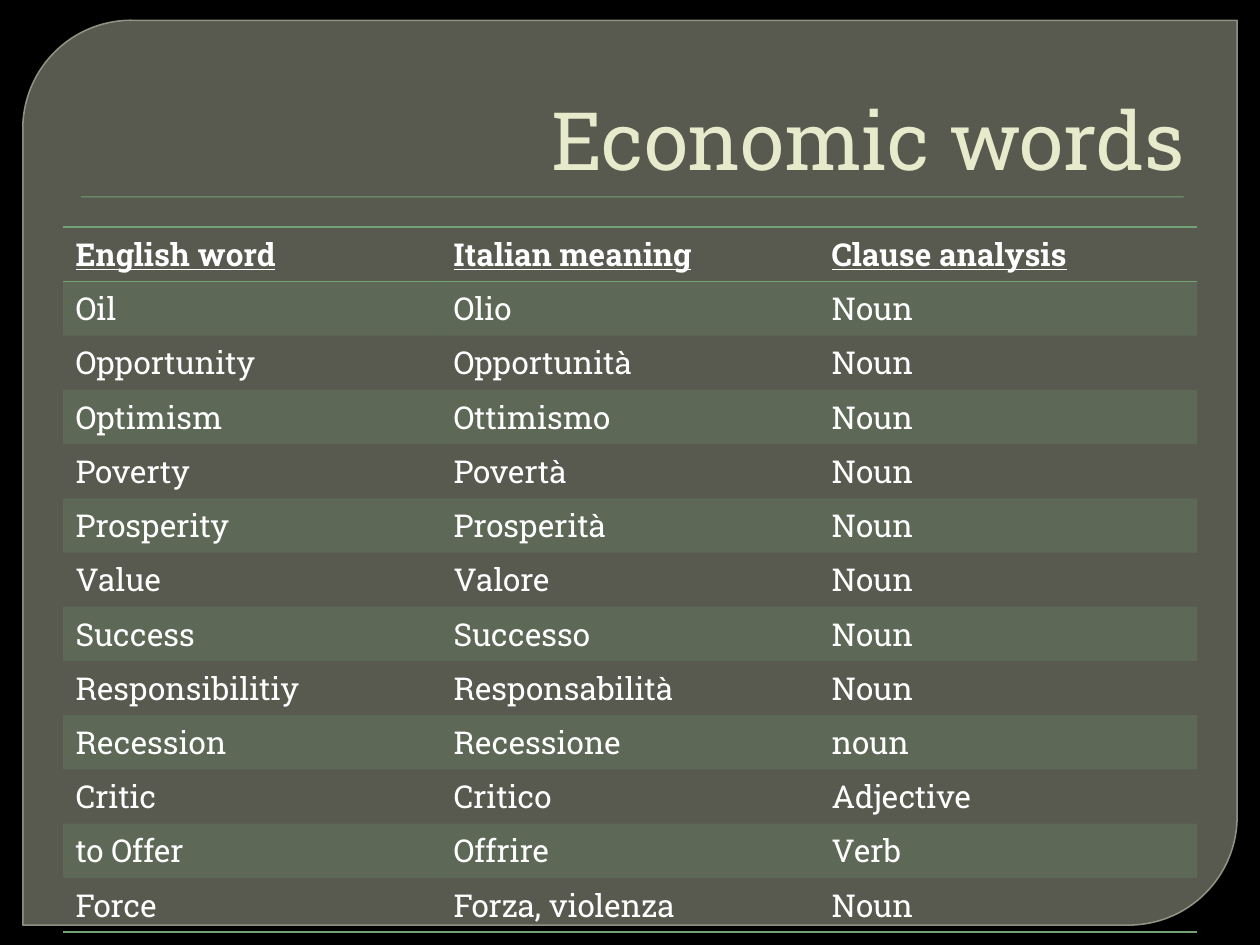
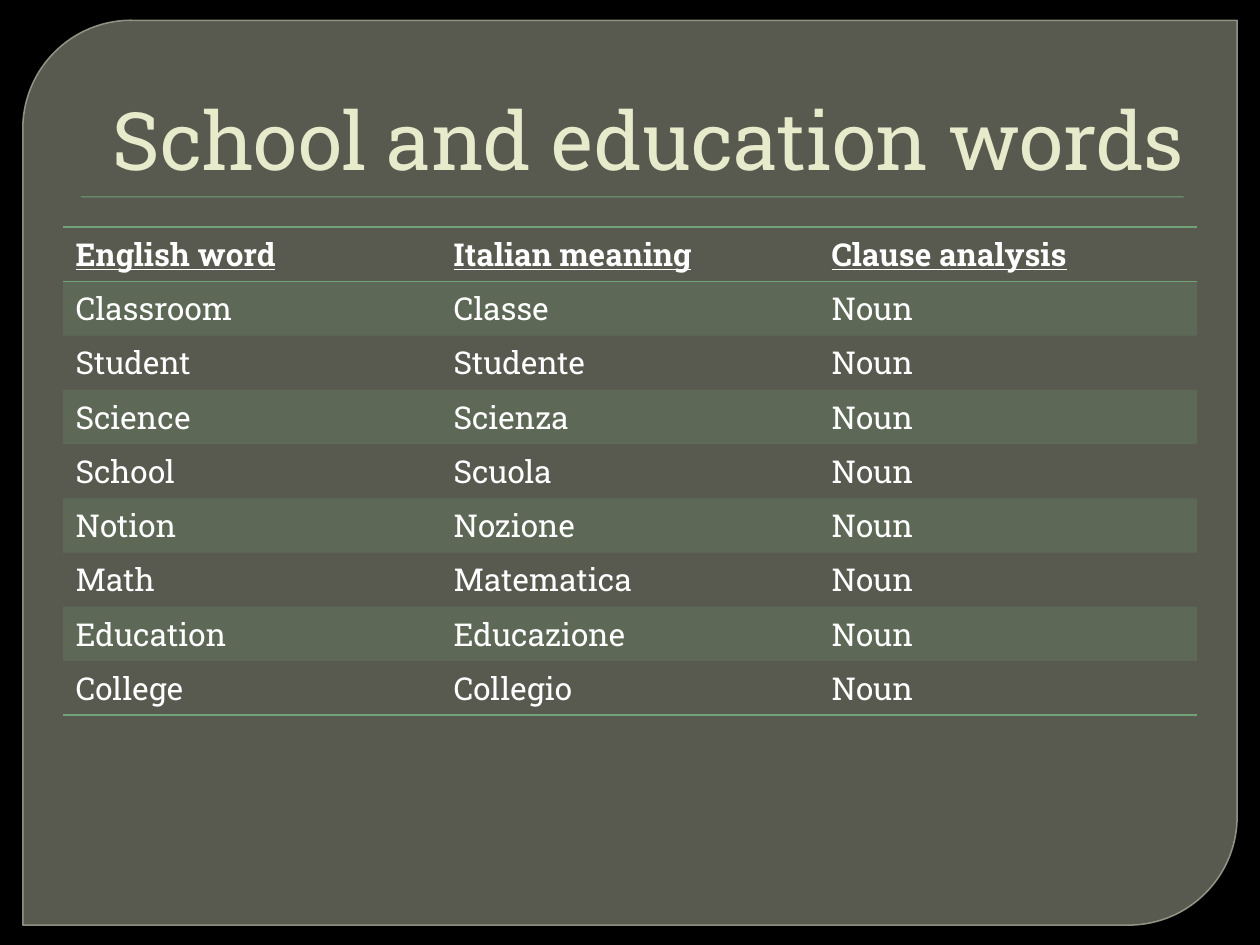
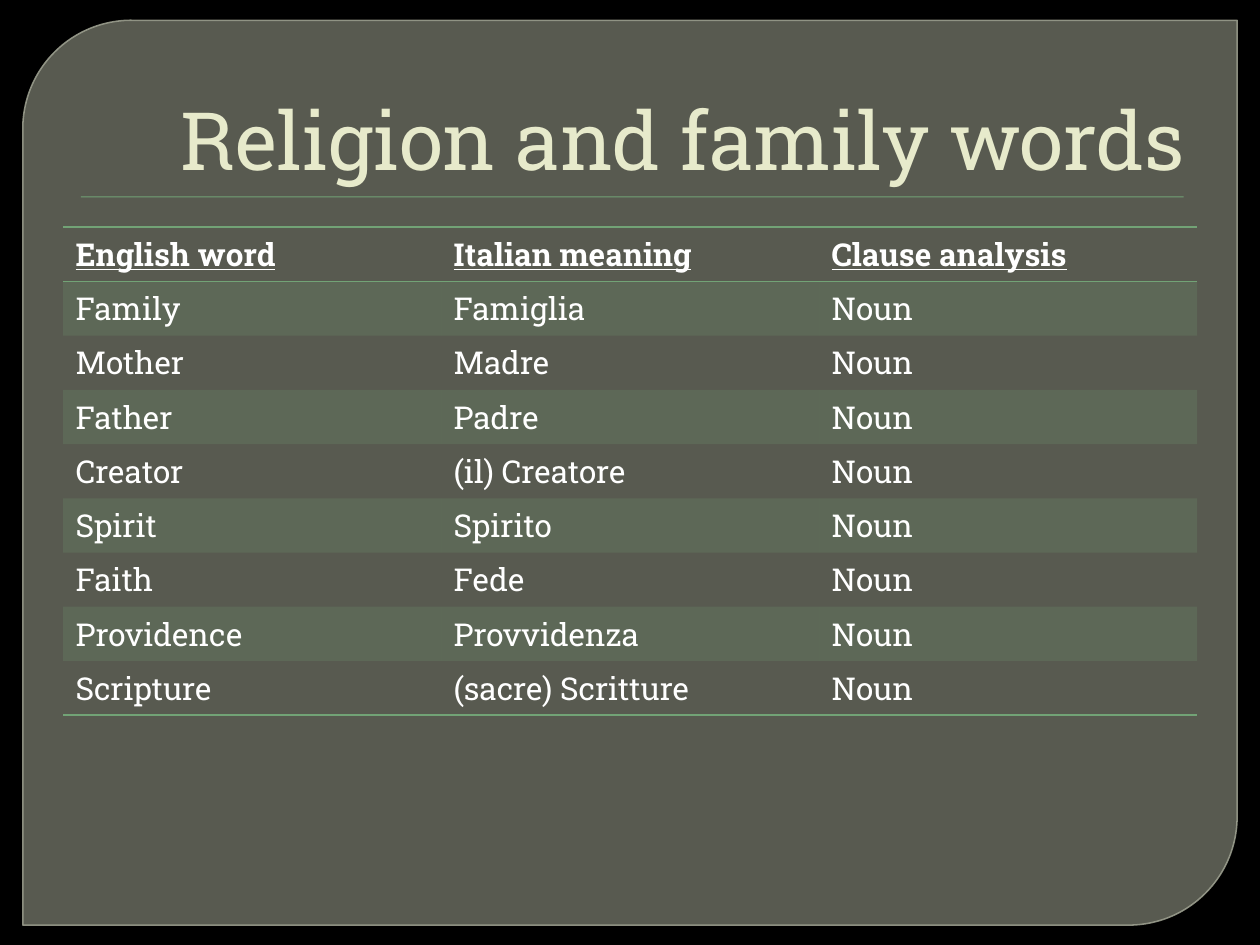
"""Build three slides of English and Italian vocabulary tables."""
from dataclasses import dataclass

from pptx import Presentation
from pptx.dml.color import RGBColor
from pptx.enum.shapes import MSO_SHAPE
from pptx.enum.text import MSO_ANCHOR, PP_ALIGN
from pptx.oxml.ns import qn
from pptx.oxml.xmlchemy import OxmlElement
from pptx.util import Cm, Pt


@dataclass(frozen=True)
class Theme:
    """Colours, font and type sizes shared by all slides."""
    background: RGBColor = RGBColor(0x00, 0x00, 0x00)
    panel: RGBColor = RGBColor(0x88, 0x8B, 0x7B)
    outline: RGBColor = RGBColor(0x9D, 0xA0, 0x90)
    accent: RGBColor = RGBColor(0x72, 0xA3, 0x76)
    title: RGBColor = RGBColor(0xE7, 0xEA, 0xCB)
    body: RGBColor = RGBColor(0xFF, 0xFF, 0xFF)
    font: str = "Roboto Slab"
    title_size: Pt = Pt(46)
    body_size: Pt = Pt(18)


THEME = Theme()
NO_STYLE_NO_GRID = "{2D5ABB26-0587-4C30-8999-92F81FD0307C}"
HEADINGS = ("English word", "Italian meaning", "Clause analysis")
COLUMN_WIDTH = Cm(7.62)
ROW_HEIGHT = Cm(17.5) // 16

VOCABULARY = {
    "Economic words": [
        ("Oil", "Olio", "Noun"),
        ("Opportunity", "Opportunità", "Noun"),
        ("Optimism", "Ottimismo", "Noun"),
        ("Poverty", "Povertà", "Noun"),
        ("Prosperity", "Prosperità", "Noun"),
        ("Value", "Valore", "Noun"),
        ("Success", "Successo", "Noun"),
        ("Responsibilitiy", "Responsabilità", "Noun"),
        ("Recession", "Recessione", "noun"),
        ("Critic", "Critico", "Adjective"),
        ("to Offer", "Offrire", "Verb"),
        ("Force", "Forza, violenza", "Noun"),
    ],
    "School and education words": [
        ("Classroom", "Classe", "Noun"),
        ("Student", "Studente", "Noun"),
        ("Science", "Scienza", "Noun"),
        ("School", "Scuola", "Noun"),
        ("Notion", "Nozione", "Noun"),
        ("Math", "Matematica", "Noun"),
        ("Education", "Educazione", "Noun"),
        ("College", "Collegio", "Noun"),
    ],
    "Religion and family words": [
        ("Family", "Famiglia", "Noun"),
        ("Mother", "Madre", "Noun"),
        ("Father", "Padre", "Noun"),
        ("Creator", "(il) Creatore", "Noun"),
        ("Spirit", "Spirito", "Noun"),
        ("Faith", "Fede", "Noun"),
        ("Providence", "Provvidenza", "Noun"),
        ("Scripture", "(sacre) Scritture", "Noun"),
    ],
}


def set_opacity(properties, percent):
    """Give the solid fill inside a properties element an opacity."""
    alpha = OxmlElement("a:alpha")
    alpha.set("val", str(percent * 1000))
    properties.find(qn("a:solidFill"))[0].append(alpha)


def style_text(paragraph, size, color):
    """Format every run of a paragraph."""
    for span in paragraph.runs:
        span.font.name = THEME.font
        span.font.size = size
        span.font.color.rgb = color


def add_backdrop(page):
    """Draw the black ground, the rounded panel and the title rule."""
    page.background.fill.solid()
    page.background.fill.fore_color.rgb = THEME.background

    panel = page.shapes.add_shape(
        MSO_SHAPE.ROUND_2_DIAG_RECTANGLE, Cm(0.46), Cm(0.41), Cm(24.48), Cm(18.24))
    panel.adjustments[0] = 0.12
    panel.adjustments[1] = 0
    panel.shadow.inherit = False
    panel.fill.solid()
    panel.fill.fore_color.rgb = THEME.panel
    panel.line.color.rgb = THEME.outline
    panel.line.width = Pt(0.87)
    properties = panel.element.spPr
    set_opacity(properties, 65)
    set_opacity(properties.find(qn("a:ln")), 88)

    rule = page.shapes.add_shape(
        MSO_SHAPE.RECTANGLE, Cm(1.63), Cm(3.96), Cm(22.23), Cm(0.02))
    rule.shadow.inherit = False
    rule.fill.solid()
    rule.fill.fore_color.rgb = THEME.accent
    rule.line.fill.background()


def add_title(page, text):
    """Add a right-aligned title that sits above the rule."""
    box = page.shapes.add_textbox(Cm(1.27), Cm(0.71), Cm(22.86), Cm(3.18))
    frame = box.text_frame
    frame.word_wrap = True
    frame.vertical_anchor = MSO_ANCHOR.BOTTOM
    frame.text = text
    paragraph = frame.paragraphs[0]
    paragraph.alignment = PP_ALIGN.RIGHT
    style_text(paragraph, THEME.title_size, THEME.title)


def add_border(cell, side):
    """Draw an accent border on one side of a cell."""
    border = OxmlElement(f"a:{side}")
    border.set("w", str(Pt(1)))
    fill = OxmlElement("a:solidFill")
    color = OxmlElement("a:srgbClr")
    color.set("val", str(THEME.accent))
    fill.append(color)
    border.append(fill)
    cell._tc.get_or_add_tcPr().append(border)


def fill_cell(cell, text, banded):
    """Write a cell and tint it when its row is banded."""
    cell.text = text
    style_text(cell.text_frame.paragraphs[0], THEME.body_size, THEME.body)
    if banded:
        cell.fill.solid()
        cell.fill.fore_color.rgb = THEME.accent
        set_opacity(cell._tc.get_or_add_tcPr(), 20)
    else:
        cell.fill.background()


def add_word_table(page, words):
    """Add a table with underlined headings and alternating bands."""
    rows = [HEADINGS, *words]
    table = page.shapes.add_table(
        len(rows), len(HEADINGS), Cm(1.27), Cm(4.58),
        COLUMN_WIDTH * len(HEADINGS), ROW_HEIGHT * len(rows)).table
    table._tbl.tblPr.find(qn("a:tableStyleId")).text = NO_STYLE_NO_GRID
    for row_index, row in enumerate(rows):
        for column_index, text in enumerate(row):
            cell = table.cell(row_index, column_index)
            if row_index == 0:
                add_border(cell, "lnT")
            if row_index in (0, len(rows) - 1):
                add_border(cell, "lnB")
            fill_cell(cell, text, row_index % 2 == 1)
    for cell in table.rows[0].cells:
        font = cell.text_frame.paragraphs[0].runs[0].font
        font.bold = True
        font.underline = True


def main():
    """Build and save the deck."""
    deck = Presentation()
    deck.slide_width = Cm(25.4)
    deck.slide_height = Cm(19.05)
    for title, words in VOCABULARY.items():
        page = deck.slides.add_slide(deck.slide_layouts[6])
        add_backdrop(page)
        add_title(page, title)
        add_word_table(page, words)
    deck.save("out.pptx")


if __name__ == "__main__":
    main()
